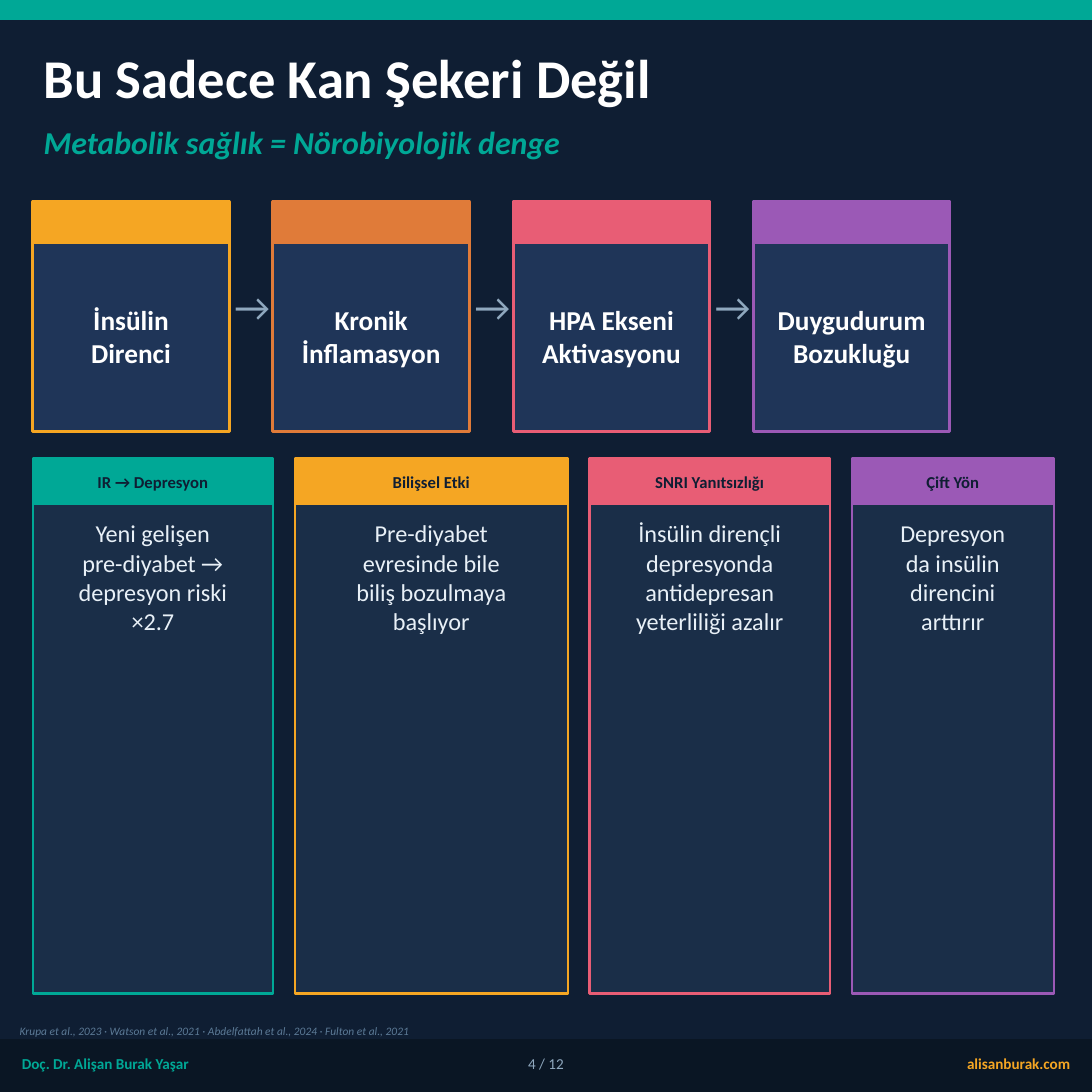
"""Builds the slide on metabolic health and neurobiological balance."""
from pptx import Presentation
from pptx.dml.color import RGBColor
from pptx.enum.shapes import MSO_SHAPE as Shape
from pptx.enum.text import MSO_ANCHOR as Anchor, MSO_AUTO_SIZE as AutoSize, PP_ALIGN as Align
from pptx.util import Inches, Pt

FONT = "Calibri"
COLORS = {
    "night": "0F1E33", "footer": "0A1624", "step": "1F3558", "card": "1A2E48",
    "teal": "00A896", "amber": "F5A623", "orange": "E07B39", "pink": "E85D75",
    "purple": "9B59B6", "white": "FFFFFF", "pale": "E8F0F7", "gray": "8FA8BE",
    "source": "5C7A96",
}
STEPS = [
    ("orange", ["Kronik", "İnflamasyon"]),
    ("pink", ["HPA Ekseni", "Aktivasyonu"]),
    ("purple", ["Duygudurum", "Bozukluğu"]),
]
STEPS.insert(0, ("amber", ["İnsülin", "Direnci"]))
CARDS = [
    ("teal", 2.2, "IR → Depresyon",
     ["Yeni gelişen", "pre-diyabet →", "depresyon riski", "×2.7"]),
    ("amber", 2.5, "Bilişsel Etki",
     ["Pre-diyabet", "evresinde bile", "biliş bozulmaya", "başlıyor"]),
    ("pink", 2.2, "SNRI Yanıtsızlığı",
     ["İnsülin dirençli", "depresyonda", "antidepresan", "yeterliliği azalır"]),
    ("purple", 1.85, "Çift Yön",
     ["Depresyon", "da insülin", "direncini", "arttırır"]),
]
LEFT = 0.3
STEP_TOP, STEP_WIDTH, STEP_PITCH = 1.85, 1.8, 2.2
CARD_TOP, CARD_GAP, CARD_PAD = 4.2, 0.2, 0.08


def color(name):
    return RGBColor.from_string(COLORS[name])


def write(shape, lines, size, ink, align=Align.LEFT, anchor=Anchor.MIDDLE,
          bold=False, italic=False):
    frame = shape.text_frame
    frame.auto_size = AutoSize.NONE
    frame.word_wrap = True
    frame.vertical_anchor = anchor
    frame.margin_left = frame.margin_right = frame.margin_top = frame.margin_bottom = 0
    for index, line in enumerate(lines):
        para = frame.add_paragraph() if index else frame.paragraphs[0]
        para.alignment = align
        run = para.add_run()
        run.text = line
        font = run.font
        font.name, font.size = FONT, Pt(size)
        font.bold, font.italic = bold, italic
        font.color.rgb = color(ink)


def add_text(page, place, lines, size, ink, **style):
    box = page.shapes.add_textbox(*map(Inches, place))
    write(box, lines, size, ink, **style)


def add_panel(page, place, fill, edge, weight=1):
    panel = page.shapes.add_shape(Shape.RECTANGLE, *map(Inches, place))
    panel.shadow.inherit = False
    panel.fill.solid()
    panel.fill.fore_color.rgb = color(fill)
    panel.line.color.rgb = color(edge)
    panel.line.width = Pt(weight)
    return panel


def add_title(page, text):
    title = page.shapes.title
    title.left, title.top, title.width, title.height = map(Inches, (0.4, 0.35, 9.2, 0.7))
    write(title, [text], 36, "white", bold=True)


def add_step(page, left, accent, lines):
    add_panel(page, (left, STEP_TOP, STEP_WIDTH, 2.1), "step", accent, 2)
    add_panel(page, (left, STEP_TOP, STEP_WIDTH, 0.38), accent, accent)
    add_text(page, (left, STEP_TOP + 0.42, STEP_WIDTH, 1.62), lines, 18, "white",
             align=Align.CENTER, bold=True)


def add_arrow(page, left):
    add_text(page, (left, STEP_TOP + 0.5, 0.38, 0.9), ["→"], 26, "gray", align=Align.CENTER)


def add_card(page, left, width, accent, heading, lines):
    add_panel(page, (left, CARD_TOP, width, 4.9), "card", accent, 1.5)
    header = add_panel(page, (left, CARD_TOP, width, 0.42), accent, accent)
    write(header, [heading], 11, "night", align=Align.CENTER, bold=True)
    add_text(page, (left + CARD_PAD, CARD_TOP + 0.55, width - 2 * CARD_PAD, 4.3),
             lines, 16, "pale", align=Align.CENTER, anchor=Anchor.TOP)


def add_footer(page):
    add_panel(page, (0, 9.52, 10, 0.48), "footer", "footer")
    add_text(page, (0.2, 9.54, 4, 0.4), ["Doç. Dr. Alişan Burak Yaşar"], 10, "teal", bold=True)
    add_text(page, (0.18, 9.34, 9.6, 0.2),
             ["Krupa et al., 2023 · Watson et al., 2021 · "
              "Abdelfattah et al., 2024 · Fulton et al., 2021"],
             7.5, "source", italic=True)
    add_text(page, (6.5, 9.54, 3.3, 0.4), ["alisanburak.com"], 10, "amber",
             align=Align.RIGHT, bold=True)
    add_text(page, (4.3, 9.54, 1.4, 0.4), ["4 / 12"], 10, "gray", align=Align.CENTER)


def main():
    deck = Presentation()
    deck.slide_width = deck.slide_height = Inches(10)
    page = deck.slides.add_slide(deck.slide_layouts[5])
    page.background.fill.solid()
    page.background.fill.fore_color.rgb = color("night")

    add_panel(page, (0, 0, 10, 0.18), "teal", "teal")
    add_title(page, "Bu Sadece Kan Şekeri Değil")
    add_text(page, (0.4, 1.05, 9.2, 0.5), ["Metabolik sağlık = Nörobiyolojik denge"],
             21, "teal", bold=True, italic=True)

    for index, (accent, lines) in enumerate(STEPS):
        left = LEFT + index * STEP_PITCH
        if index:
            add_arrow(page, left - 0.38)
        add_step(page, left, accent, lines)

    left = LEFT
    for accent, width, heading, lines in CARDS:
        add_card(page, left, width, accent, heading, lines)
        left += width + CARD_GAP

    add_footer(page)
    deck.save("out.pptx")


if __name__ == "__main__":
    main()
